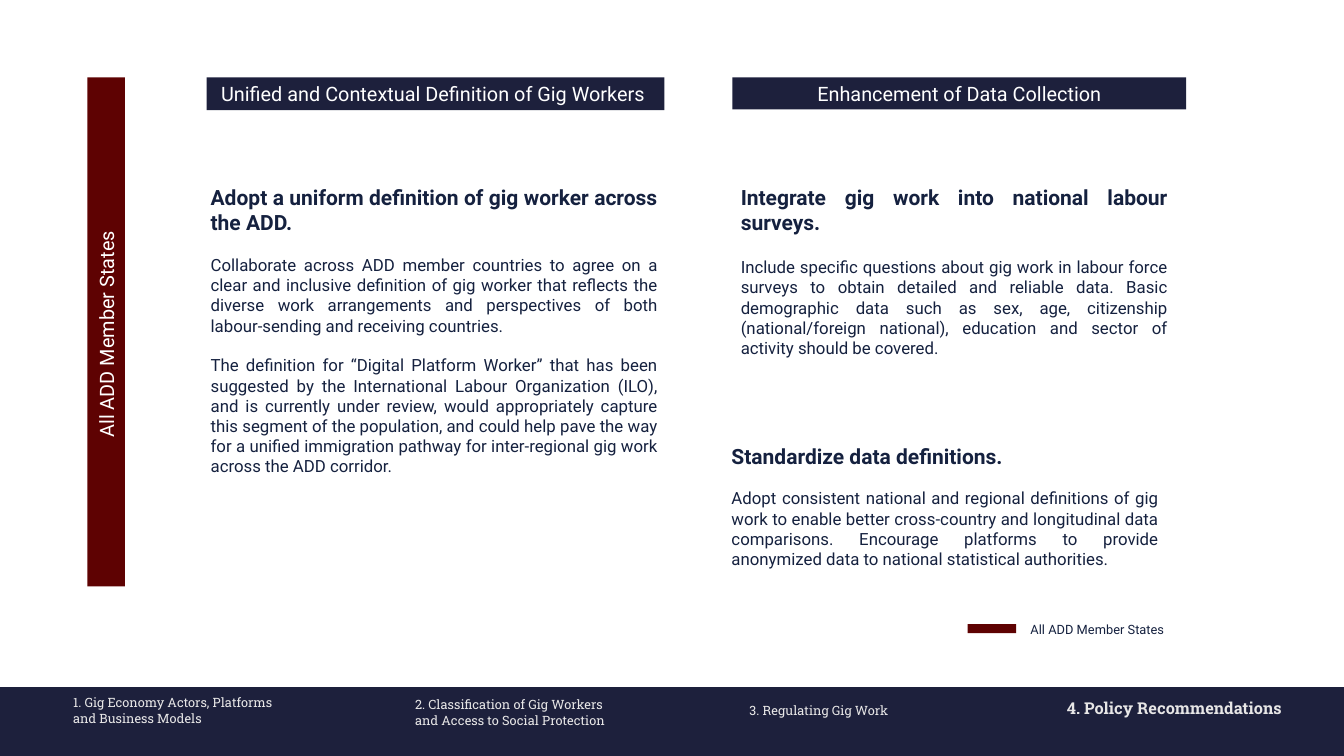
"""Build the slide on policy recommendations for all ADD member states."""
from dataclasses import dataclass
from typing import NamedTuple

from pptx import Presentation
from pptx.dml.color import RGBColor as Rgb
from pptx.enum.shapes import MSO_SHAPE as Preset
from pptx.enum.text import MSO_ANCHOR as Anchor, PP_ALIGN as Align
from pptx.shapes.autoshape import Shape
from pptx.slide import Slide
from pptx.text.text import TextFrame
from pptx.util import Cm, Pt


@dataclass(frozen=True)
class Theme:
    """Colours, fonts and type sizes of the slide."""
    navy: str = "1D203C"
    maroon: str = "5E0202"
    ink: str = "15213F"
    white: str = "FFFFFF"
    pale: str = "E7E6E6"
    sans: str = "Roboto"
    slab: str = "Roboto Slab"
    banner: float = 17
    heading: float = 18
    body: float = 14.4
    small: float = 11
    current: float = 14


THEME = Theme()


class Box(NamedTuple):
    """Left, top, width and height in centimetres."""
    left: float
    top: float
    width: float
    height: float


class Style(NamedTuple):
    """Look of a run and its paragraph."""
    size: float
    color: str
    font: str = THEME.sans
    bold: bool = False
    align: Align = Align.LEFT


class Banner(NamedTuple):
    """Filled bar with its label."""
    box: Box
    fill: str
    label: str = ""
    vertical: bool = False


class Recommendation(NamedTuple):
    """Heading followed by evenly spaced body paragraphs."""
    box: Box
    heading: str
    details: tuple[str, ...]
    gap: float = 16.9


class Chapter(NamedTuple):
    """Footer entry, one string per line."""
    box: Box
    lines: tuple[str, ...]
    current: bool = False


BANNER_STYLE = Style(THEME.banner, THEME.white, align=Align.CENTER)
HEADING_STYLE = Style(THEME.heading, THEME.ink, bold=True, align=Align.JUSTIFY)
BODY_STYLE = Style(THEME.body, THEME.ink, align=Align.JUSTIFY)
LEGEND_STYLE = Style(THEME.small, THEME.ink)
CHAPTER_STYLE = Style(THEME.small, THEME.pale, THEME.slab)
CURRENT_STYLE = Style(THEME.current, THEME.pale, THEME.slab, True)

BANNERS = (
    Banner(Box(6.25, 2.34, 13.84, 0.99), THEME.navy,
           "Unified and Contextual Definition of Gig Workers "),
    Banner(Box(22.15, 2.34, 13.72, 0.97), THEME.navy, "Enhancement of Data Collection"),
    Banner(Box(2.64, 2.34, 1.14, 15.39), THEME.maroon, "All ADD Member States ", True),
    Banner(Box(29.26, 18.87, 1.47, 0.28), THEME.maroon),
    Banner(Box(0, 20.78, 40.64, 2.08), THEME.navy),
)

RECOMMENDATIONS = (
    Recommendation(
        Box(6.12, 5.46, 14.02, 9.8),
        "Adopt a uniform definition of gig worker across the ADD.",
        ("Collaborate across ADD member countries to agree on a clear and inclusive "
         "definition of gig worker that reflects the diverse work arrangements and "
         "perspectives of both labour-sending and receiving countries.",
         "The definition for “Digital Platform Worker” that has been suggested by the "
         "International Labour Organization (ILO), and is currently under review, would "
         "appropriately capture this segment of the population, and could help pave the "
         "way for a unified immigration pathway for inter-regional gig work across the "
         "ADD corridor.")),
    Recommendation(
        Box(22.15, 5.46, 13.41, 5.56),
        "Integrate gig work into national labour surveys.",
        ("Include specific questions about gig work in labour force surveys to obtain "
         "detailed and reliable data. Basic demographic data such as sex, age, "
         "citizenship (national/foreign national), education and sector of activity "
         "should be covered.",), 18.8),
    Recommendation(
        Box(21.87, 13.28, 13.41, 4.11),
        "Standardize data definitions.",
        ("Adopt consistent national and regional definitions of gig work to enable "
         "better cross-country and longitudinal data comparisons. Encourage platforms "
         "to provide anonymized data to national statistical authorities.",)),
)

CHAPTERS = (
    Chapter(Box(2.21, 21.01, 6.4, 1.07),
            ("1. Gig Economy Actors, Platforms", "and Business Models")),
    Chapter(Box(12.55, 21.08, 6.17, 0.76),
            ("2. Classification of Gig Workers", "and Access to Social Protection")),
    Chapter(Box(22.66, 21.26, 5.66, 0.66), ("3. Regulating Gig Work",)),
    Chapter(Box(32.26, 21.11, 6.99, 1.07), ("4. Policy Recommendations",), True),
)

LEGEND_BOX = Box(30.91, 18.67, 5.94, 0.74)


def add_line(frame: TextFrame, text: str, style: Style, gap: float = 0) -> None:
    """Write a paragraph, using the empty first one when it is free."""
    first = frame.paragraphs[0]
    paragraph = frame.add_paragraph() if first.runs else first
    paragraph.alignment = style.align
    if gap:
        paragraph.space_before = Pt(gap)
    run = paragraph.add_run()
    run.text = text
    run.font.name = style.font
    run.font.size = Pt(style.size)
    run.font.bold = style.bold
    run.font.color.rgb = Rgb.from_string(style.color)


def add_text_area(slide: Slide, box: Box, inset: bool = True) -> TextFrame:
    """Add a wrapping text box, with or without inner margins."""
    frame = slide.shapes.add_textbox(*map(Cm, box)).text_frame
    frame.word_wrap = True
    if not inset:
        frame.margin_left = frame.margin_top = 0
        frame.margin_right = frame.margin_bottom = 0
    return frame


def draw_banner(slide: Slide, banner: Banner) -> Shape:
    """Draw a plain bar and its label, if any."""
    bar = slide.shapes.add_shape(Preset.RECTANGLE, *map(Cm, banner.box))
    bar.shadow.inherit = False
    bar.fill.solid()
    bar.fill.fore_color.rgb = Rgb.from_string(banner.fill)
    bar.line.fill.background()
    if banner.label:
        frame = bar.text_frame
        frame.word_wrap = True
        frame.vertical_anchor = Anchor.MIDDLE if banner.vertical else Anchor.TOP
        if banner.vertical:
            bar.element.txBody.bodyPr.set("vert", "vert270")
        add_line(frame, banner.label, BANNER_STYLE)
    return bar


def draw_recommendation(slide: Slide, item: Recommendation) -> None:
    """Write a heading and its details."""
    frame = add_text_area(slide, item.box)
    add_line(frame, item.heading, HEADING_STYLE)
    for detail in item.details:
        add_line(frame, detail, BODY_STYLE, item.gap)


def draw_chapter(slide: Slide, chapter: Chapter) -> None:
    """Write a footer entry, with the current one emphasised."""
    frame = add_text_area(slide, chapter.box, inset=False)
    for line in chapter.lines:
        add_line(frame, line, CURRENT_STYLE if chapter.current else CHAPTER_STYLE)


def main() -> None:
    """Assemble and save the slide."""
    deck = Presentation()
    deck.slide_width, deck.slide_height = Cm(40.64), Cm(22.86)
    slide = deck.slides.add_slide(deck.slide_layouts.get_by_name("Blank"))
    for banner in BANNERS:
        draw_banner(slide, banner)
    for item in RECOMMENDATIONS:
        draw_recommendation(slide, item)
    for chapter in CHAPTERS:
        draw_chapter(slide, chapter)
    add_line(add_text_area(slide, LEGEND_BOX), "All ADD Member States", LEGEND_STYLE)
    deck.save("out.pptx")


if __name__ == "__main__":
    main()
